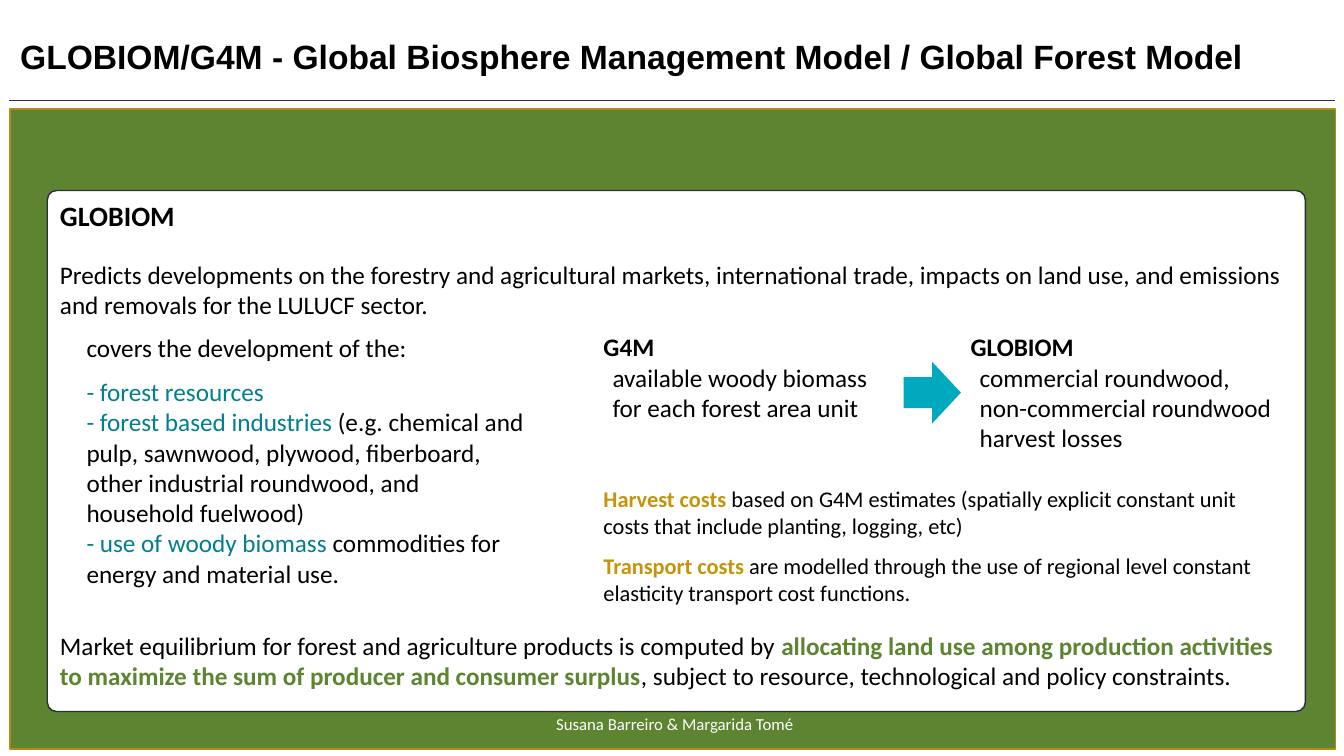
from dataclasses import dataclass

from lxml.etree import SubElement
from pptx import Presentation
from pptx.dml.color import RGBColor
from pptx.enum.shapes import MSO_CONNECTOR as Connector
from pptx.enum.shapes import MSO_SHAPE as Preset
from pptx.enum.text import MSO_ANCHOR as Anchor
from pptx.enum.text import MSO_AUTO_SIZE as AutoSize
from pptx.enum.text import PP_ALIGN as Align
from pptx.oxml.ns import qn
from pptx.util import Pt


@dataclass(frozen=True)
class Theme:
    black: str = "000000"
    white: str = "FFFFFF"
    green: str = "5D8431"
    teal: str = "007F8E"
    arrow: str = "00A9BE"
    gold: str = "C5940C"
    frame: str = "B38B1B"
    slate: str = "273238"
    title_font: str = "Arial"
    body_font: str = "Calibri"
    title: float = 24
    heading: float = 20
    body: float = 18
    detail: float = 16
    footer: float = 12


THEME = Theme()


@dataclass(frozen=True)
class Box:
    left: float
    top: float
    width: float
    height: float

    def lengths(self) -> list:
        return [Pt(value) for value in (self.left, self.top, self.width, self.height)]


@dataclass(frozen=True)
class Span:
    text: str
    color: str = THEME.black
    bold: bool = False


@dataclass(frozen=True)
class Line:
    spans: tuple[Span, ...]
    size: float = THEME.body
    before: float = 0
    indent: float = 0
    align: Align = Align.LEFT
    font: str = THEME.body_font


@dataclass(frozen=True)
class TextBlock:
    box: Box
    lines: tuple[Line, ...]


@dataclass(frozen=True)
class Panel:
    preset: Preset
    box: Box
    fill: str
    outline: str | None = None
    corner: float | None = None
    lines: tuple[Line, ...] = ()


BULLET_GAP = 9.8
COLUMN_LEFT = 424
TRANSFER_TOP = 233.3
TRANSFER_INDENT = 6.5

TITLE = TextBlock(Box(7.2, 22.3, 934, 36), (
    Line((Span("GLOBIOM/G4M - Global Biosphere Management Model / Global Forest Model", bold=True),),
         THEME.title, before=2, font=THEME.title_font),
))

PANELS = (
    Panel(Preset.RECTANGLE, Box(7.2, 77.8, 946.8, 457.2), THEME.green, THEME.frame),
    Panel(Preset.ROUNDED_RECTANGLE, Box(33.8, 136.1, 898.6, 372.2), THEME.white, THEME.slate, 0.018, (
        Line((Span("GLOBIOM", bold=True),), THEME.heading),
        Line((Span("Predicts developments on the forestry and agricultural markets, international trade, "
                   "impacts on land use, and emissions and removals for the LULUCF sector."),), before=19.5),
        Line((Span("Market equilibrium for forest and agriculture products is computed by "),
              Span("allocating land use among production activities to maximize the sum of "
                   "producer and consumer surplus", THEME.green, True),
              Span(", subject to resource, technological and policy constraints.")), before=222),
    )),
    Panel(Preset.RIGHT_ARROW, Box(645.4, 258.5, 41, 44), THEME.arrow),
)

TEXT_BLOCKS = (
    TextBlock(Box(54.7, 234, 330.5, 191.5), (
        Line((Span("covers the development of the:"),)),
        Line((Span("- forest resources", THEME.teal),), before=BULLET_GAP),
        Line((Span("- forest based industries ", THEME.teal),
              Span("(e.g. chemical and pulp, sawnwood, plywood, fiberboard, "
                   "other industrial roundwood, and household fuelwood)"))),
        Line((Span("- use of woody biomass ", THEME.teal),
              Span("commodities for energy and material use."))),
    )),
    TextBlock(Box(COLUMN_LEFT, TRANSFER_TOP, 205, 94.3), (
        Line((Span("G4M", bold=True),)),
        Line((Span("available woody biomass for each forest area unit"),), indent=TRANSFER_INDENT),
    )),
    TextBlock(Box(686.2, TRANSFER_TOP, 264.2, 94.3), (
        Line((Span("GLOBIOM", bold=True),)),
        Line((Span("commercial roundwood,"),), indent=TRANSFER_INDENT),
        Line((Span("non-commercial roundwood harvest losses"),), indent=TRANSFER_INDENT),
    )),
    TextBlock(Box(COLUMN_LEFT, 342.7, 484.6, 94.3), (
        Line((Span("Harvest costs ", THEME.gold, True),
              Span("based on G4M estimates (spatially explicit constant unit costs that include "
                   "planting, logging, etc)")), THEME.detail),
        Line((Span("Transport costs ", THEME.gold, True),
              Span("are modelled through the use of regional level constant elasticity "
                   "transport cost functions.")), THEME.detail, before=BULLET_GAP),
    )),
    TextBlock(Box(7.2, 506.2, 949.7, 21.6), (
        Line((Span("Susana Barreiro & Margarida Tomé", THEME.white),), THEME.footer, align=Align.CENTER),
    )),
)


def apply(target, formats: dict) -> None:
    for name, value in formats.items():
        setattr(target, name, value)


def write_lines(frame, lines: tuple[Line, ...]) -> None:
    apply(frame, {"word_wrap": True, "auto_size": AutoSize.NONE, "vertical_anchor": Anchor.TOP})
    for index, line in enumerate(lines):
        paragraph = frame.add_paragraph() if index else frame.paragraphs[0]
        apply(paragraph, {"alignment": line.align, "space_before": Pt(line.before), "line_spacing": 1.0})
        if line.indent:
            paragraph._p.get_or_add_pPr().set("marL", str(Pt(line.indent)))
        for span in line.spans:
            run = paragraph.add_run()
            run.text = span.text
            apply(run.font, {"name": line.font, "size": Pt(line.size), "bold": span.bold})
            run.font.color.rgb = RGBColor.from_string(span.color)


def add_panel(slide, panel: Panel) -> None:
    shape = slide.shapes.add_shape(panel.preset, *panel.box.lengths())
    shape.shadow.inherit = False
    shape.fill.solid()
    shape.fill.fore_color.rgb = RGBColor.from_string(panel.fill)
    if panel.outline:
        shape.line.color.rgb = RGBColor.from_string(panel.outline)
        shape.line.width = Pt(1)
    else:
        shape.line.fill.background()
    if panel.corner is not None:
        shape.adjustments[0] = panel.corner
    if panel.lines:
        write_lines(shape.text_frame, panel.lines)


def add_title_rule(slide) -> None:
    rule = slide.shapes.add_connector(Connector.STRAIGHT, Pt(6.5), Pt(72), Pt(953.3), Pt(72))
    rule.line.color.rgb = RGBColor.from_string(THEME.slate)
    rule.line.width = Pt(0.5)
    SubElement(rule._element.spPr, qn("a:effectLst"))


def main() -> None:
    presentation = Presentation()
    apply(presentation, {"slide_width": Pt(960), "slide_height": Pt(540)})
    slide = presentation.slides.add_slide(presentation.slide_layouts[5])
    title = slide.shapes.title
    apply(title, dict(zip(("left", "top", "width", "height"), TITLE.box.lengths())))
    write_lines(title.text_frame, TITLE.lines)
    add_title_rule(slide)
    for panel in PANELS:
        add_panel(slide, panel)
    for block in TEXT_BLOCKS:
        write_lines(slide.shapes.add_textbox(*block.box.lengths()).text_frame, block.lines)
    presentation.save("out.pptx")


if __name__ == "__main__":
    main()
